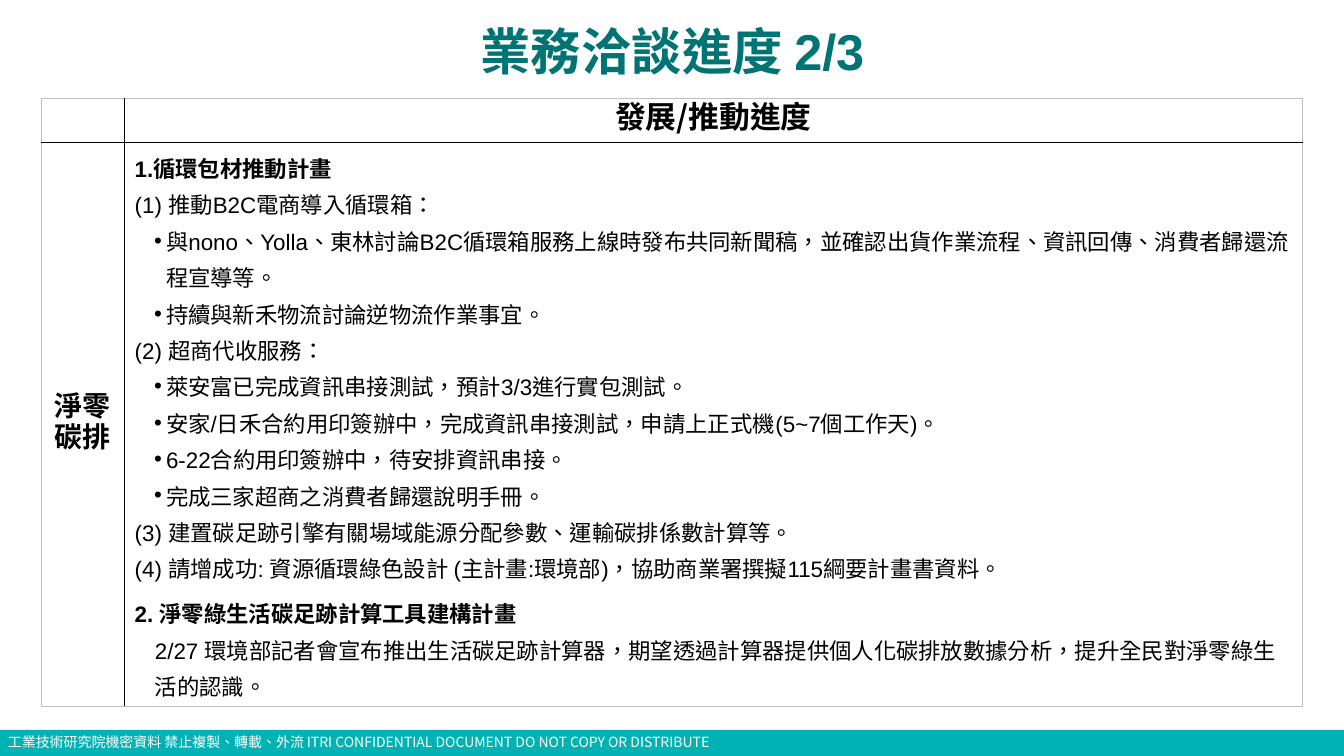
"""Build the business progress slide with its net-zero progress table."""
import lxml.etree
import pptx
import pptx.dml.color
import pptx.enum.shapes
import pptx.enum.text
import pptx.oxml.ns
import pptx.util

Cm, Pt = pptx.util.Cm, pptx.util.Pt
CENTER = pptx.enum.text.PP_ALIGN.CENTER
MIDDLE = pptx.enum.text.MSO_ANCHOR.MIDDLE
qn = pptx.oxml.ns.qn

CJK = "Noto Sans CJK SC"
TITLE = "業務洽談進度 2/3"
FOOTER = "工業技術研究院機密資料 禁止複製、轉載、外流 ITRI CONFIDENTIAL DOCUMENT DO NOT COPY OR DISTRIBUTE"
PROGRESS_HEADING = "發展/推動進度"
TOPIC = "淨零碳排"
PROGRESS = [
    ("plan", "1.循環包材推動計畫"),
    ("item", "(1) 推動B2C電商導入循環箱："),
    ("bullet", "與nono、Yolla、東林討論B2C循環箱服務上線時發布共同新聞稿，並確認出貨作業流程、資訊回傳、消費者歸還流程宣導等。"),
    ("bullet", "持續與新禾物流討論逆物流作業事宜。"),
    ("item", "(2) 超商代收服務："),
    ("bullet", "萊安富已完成資訊串接測試，預計3/3進行實包測試。"),
    ("bullet", "安家/日禾合約用印簽辦中，完成資訊串接測試，申請上正式機(5~7個工作天)。"),
    ("bullet", "6-22合約用印簽辦中，待安排資訊串接。"),
    ("bullet", "完成三家超商之消費者歸還說明手冊。"),
    ("item", "(3) 建置碳足跡引擎有關場域能源分配參數、運輸碳排係數計算等。"),
    ("item", "(4) 請增成功: 資源循環綠色設計 (主計畫:環境部)，協助商業署撰擬115綱要計畫書資料。"),
    ("plan", "2. 淨零綠生活碳足跡計算工具建構計畫"),
    ("note", "2/27 環境部記者會宣布推出生活碳足跡計算器，期望透過計算器提供個人化碳排放數據分析，提升全民對淨零綠生活的認識。"),
]
INDENTS = {"plan": (0.48, -0.48), "item": (0.48, -0.48), "bullet": (0.79, -0.3), "note": (0.51, 0)}
COLUMNS = [2.1, 29.68]
ROWS = [1.11, 14.2]
SLIDE_WIDTH, SLIDE_HEIGHT = 33.87, 19.05


def color(hex_value):
    return pptx.dml.color.RGBColor.from_string(hex_value)


def write(paragraph, text, size, hex_value="000000", face=CJK, bold=False, spacing=None):
    run = paragraph.add_run()
    run.text = text
    run.font.size, run.font.bold, run.font.name = Pt(size), bold, face
    run.font.color.rgb = color(hex_value)
    properties = run.font._element
    properties.set("lang", "zh-TW")
    lxml.etree.SubElement(properties, qn("a:ea")).set("typeface", CJK)
    if spacing:
        paragraph.line_spacing = Pt(spacing)


def indent(paragraph, left, first):
    properties = paragraph._p.get_or_add_pPr()
    properties.set("marL", str(Cm(left)))
    properties.set("indent", str(Cm(first)))
    return properties


def border(cell, side, hex_value, width):
    line = lxml.etree.SubElement(cell._tc.get_or_add_tcPr(), qn("a:ln" + side), w=str(Pt(width)))
    fill = lxml.etree.SubElement(line, qn("a:solidFill"))
    lxml.etree.SubElement(fill, qn("a:srgbClr"), val=hex_value)


def text_box(slide, left, top, width, height):
    frame = slide.shapes.add_textbox(Cm(left), Cm(top), Cm(width), Cm(height)).text_frame
    frame.word_wrap, frame.vertical_anchor = True, MIDDLE
    return frame.paragraphs[0]


def add_footer(slide):
    bar = slide.shapes.add_shape(pptx.enum.shapes.MSO_SHAPE.RECTANGLE,
                                 Cm(0), Cm(18.39), Cm(SLIDE_WIDTH), Cm(0.66))
    bar.shadow.inherit = False
    bar.fill.solid()
    bar.fill.fore_color.rgb = color("00B2B3")
    bar.line.fill.background()
    write(text_box(slide, -0.05, 18.36, 26.37, 0.69), FOOTER, 10, "FFFFFF")


def add_progress_table(slide):
    table = slide.shapes.add_table(len(ROWS), len(COLUMNS), Cm(1.04), Cm(2.48),
                                   Cm(sum(COLUMNS)), Cm(sum(ROWS))).table
    table.first_row = table.horz_banding = False
    for column, width in zip(table.columns, COLUMNS):
        column.width = Cm(width)
    for row, height in zip(table.rows, ROWS):
        row.height = Cm(height)
    for r in range(len(ROWS)):
        for c in range(len(COLUMNS)):
            cell = table.cell(r, c)
            cell.vertical_anchor = MIDDLE
            for side, inner in (("L", c > 0), ("R", c < 1), ("T", r > 0), ("B", r < 1)):
                border(cell, side, *(("000000", 1) if inner else ("BFBFBF", 0.75)))
            cell.fill.solid()
            cell.fill.fore_color.rgb = color("FFFFFF")

    for cell, text, size in ((table.cell(0, 1), PROGRESS_HEADING, 22), (table.cell(1, 0), TOPIC, 20)):
        heading = cell.text_frame.paragraphs[0]
        heading.alignment = CENTER
        write(heading, text, size, bold=True, spacing=size + 2)

    frame = table.cell(1, 1).text_frame
    for number, (level, text) in enumerate(PROGRESS):
        entry = frame.add_paragraph() if number else frame.paragraphs[0]
        properties = indent(entry, *INDENTS[level])
        if level == "bullet":
            lxml.etree.SubElement(properties, qn("a:buFont"), typeface="Arial")
            lxml.etree.SubElement(properties, qn("a:buChar"), char="•")
        if level == "plan" and number:
            entry.space_before = Pt(6)
        write(entry, text, 16, face="Arial", bold=level == "plan", spacing=26)


def main():
    deck = pptx.Presentation()
    deck.slide_width, deck.slide_height = Cm(SLIDE_WIDTH), Cm(SLIDE_HEIGHT)
    slide = deck.slides.add_slide(deck.slide_layouts[6])
    add_footer(slide)
    add_progress_table(slide)
    title = text_box(slide, 7.52, 0.5, 18.85, 1.52)
    title.alignment = CENTER
    write(title, TITLE, 36, "007474", "Arial", True)
    deck.save("out.pptx")


if __name__ == "__main__":
    main()
